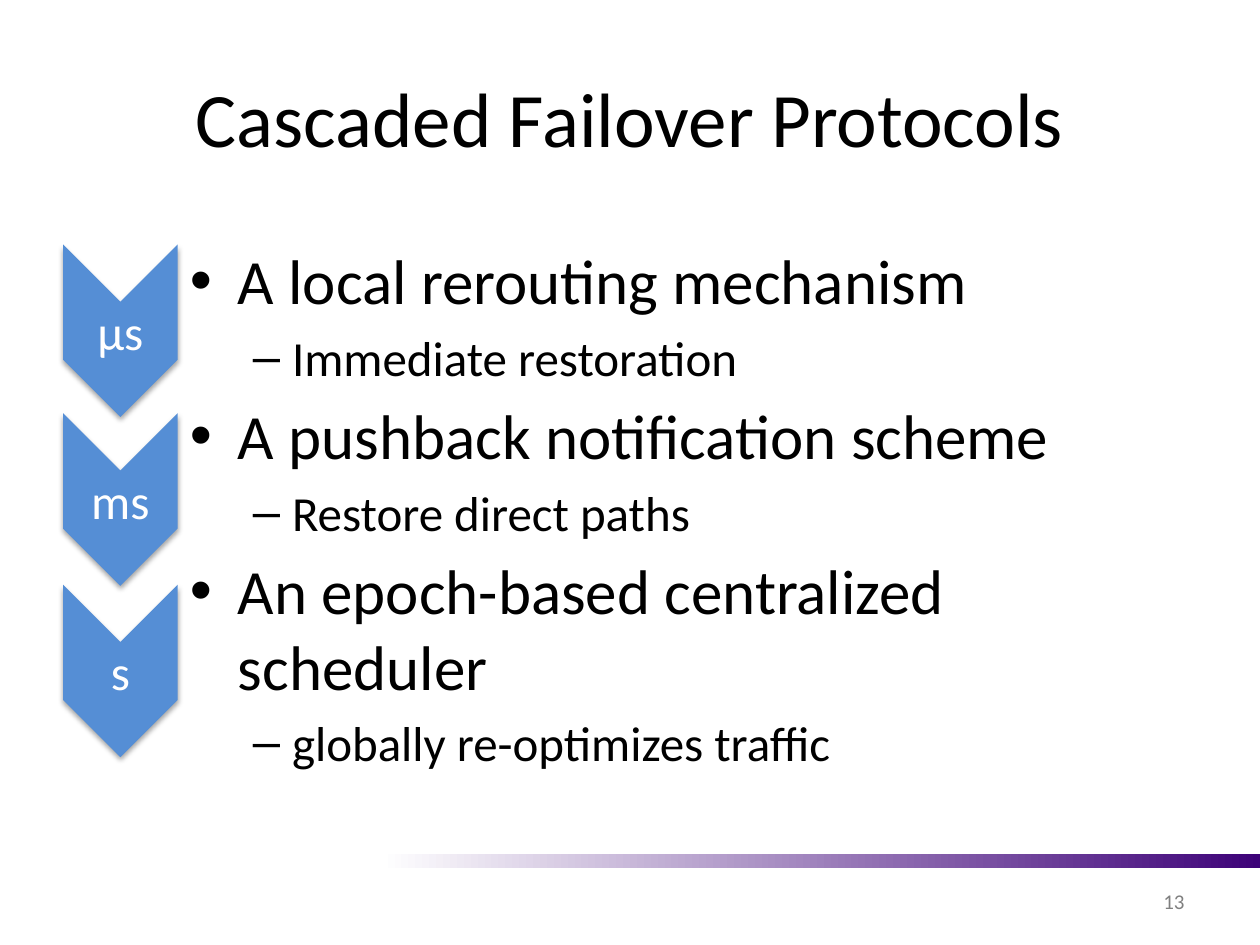
from dataclasses import dataclass

from lxml.etree import SubElement
from pptx import Presentation
from pptx.dml.color import RGBColor
from pptx.enum.shapes import MSO_SHAPE as Shape
from pptx.enum.text import MSO_ANCHOR as Anchor, PP_ALIGN as Align
from pptx.oxml.ns import qn
from pptx.util import Inches, Pt

FONT = "Calibri"
BLACK, WHITE, GRAY = "000000", "FFFFFF", "808080"
BLUE, PURPLE = "558ED5", "3D0278"


@dataclass
class Level:
    bullet: str
    size: float
    indent: float
    hanging: float
    space_before: float


@dataclass
class Stage:
    timescale: str
    top: float
    protocol: str
    effect: str


MAIN = Level("•", 36, 0.38, 0.38, 6)
SUB = Level("–", 28, 0.81, 0.31, 5.6)
STAGES = [
    Stage("μs", 2.17, "A local rerouting mechanism", "Immediate restoration"),
    Stage("ms", 3.51, "A pushback notification scheme", "Restore direct paths"),
    Stage("s", 4.87, "An epoch-based centralized scheduler",
          "globally re-optimizes traffic"),
]


def color(value: str) -> RGBColor:
    return RGBColor.from_string(value)


def add_run(paragraph, text: str, size: float, ink: str = BLACK) -> None:
    run = paragraph.add_run()
    run.text = text
    run.font.name = FONT
    run.font.size = Pt(size)
    run.font.color.rgb = color(ink)


def add_text_frame(slide, left: float, top: float, width: float, height: float,
                   anchor=Anchor.MIDDLE):
    box = slide.shapes.add_textbox(
        Inches(left), Inches(top), Inches(width), Inches(height))
    frame = box.text_frame
    frame.word_wrap = True
    frame.vertical_anchor = anchor
    return frame


def add_line(slide, text: str, place: tuple, size: float, align,
             ink: str = BLACK) -> None:
    paragraph = add_text_frame(slide, *place).paragraphs[0]
    paragraph.alignment = align
    add_run(paragraph, text, size, ink)


def add_bullet(paragraph, text: str, level: Level, first: bool) -> None:
    paragraph.space_before = Pt(0 if first else level.space_before)
    properties = paragraph._p.get_or_add_pPr()
    properties.set("marL", str(Inches(level.indent)))
    properties.set("indent", str(-Inches(level.hanging)))
    SubElement(properties, qn("a:buFont"), typeface="Arial")
    SubElement(properties, qn("a:buChar"), char=level.bullet)
    add_run(paragraph, text, level.size)


def add_soft_shadow(shape) -> None:
    effects = shape._element.spPr.find(qn("a:effectLst"))
    shadow = SubElement(effects, qn("a:outerShdw"), blurRad=str(Pt(3.1)),
                        dist=str(Pt(1.8)), dir="5400000", rotWithShape="0")
    tint = SubElement(shadow, qn("a:srgbClr"), val=BLACK)
    SubElement(tint, qn("a:alpha"), val="35000")


def add_chevron(slide, stage: Stage) -> None:
    chevron = slide.shapes.add_shape(
        Shape.CHEVRON, Inches(0.27), Inches(stage.top), Inches(1.37), Inches(0.91))
    chevron.rotation = 90
    chevron.fill.solid()
    chevron.fill.fore_color.rgb = color(BLUE)
    chevron.line.fill.background()
    chevron.shadow.inherit = False
    add_soft_shadow(chevron)
    frame = chevron.text_frame
    frame.vertical_anchor = Anchor.MIDDLE
    # Turn the label back upright
    frame._txBody.bodyPr.set("vert", "vert270")
    frame.paragraphs[0].alignment = Align.CENTER
    add_run(frame.paragraphs[0], stage.timescale, 28, WHITE)


def add_footer_band(slide) -> None:
    band = slide.shapes.add_shape(
        Shape.RECTANGLE, Inches(1.79), Inches(6.78), Inches(8.21), Inches(0.11))
    band.shadow.inherit = False
    band.line.fill.background()
    band.fill.gradient()
    band.fill.gradient_angle = 0
    for stop, (position, shade) in zip(band.fill.gradient_stops,
                                       [(0.15, WHITE), (1, PURPLE)]):
        stop.position = position
        stop.color.rgb = color(shade)


def main() -> None:
    deck = Presentation()
    deck.slide_width, deck.slide_height = Inches(10), Inches(7.5)
    slide = deck.slides.add_slide(deck.slide_layouts[6])

    # Footer band and title
    add_footer_band(slide)
    add_line(slide, "Cascaded Failover Protocols", (0.5, 0.3, 9, 1.25), 44,
             Align.CENTER)

    # Protocols and their effects
    protocols = add_text_frame(slide, 1.41, 1.92, 8.26, 4.76, Anchor.TOP)
    protocols.margin_top = 0
    bullets = [item for stage in STAGES
               for item in ((stage.protocol, MAIN), (stage.effect, SUB))]
    for index, (text, level) in enumerate(bullets):
        paragraph = protocols.add_paragraph() if index else protocols.paragraphs[0]
        add_bullet(paragraph, text, level, first=index == 0)

    # Slide number
    add_line(slide, "13", (7.17, 6.95, 2.33, 0.4), 12, Align.RIGHT, GRAY)

    # Timescale chevrons
    for stage in STAGES:
        add_chevron(slide, stage)

    deck.save("out.pptx")


if __name__ == "__main__":
    main()
